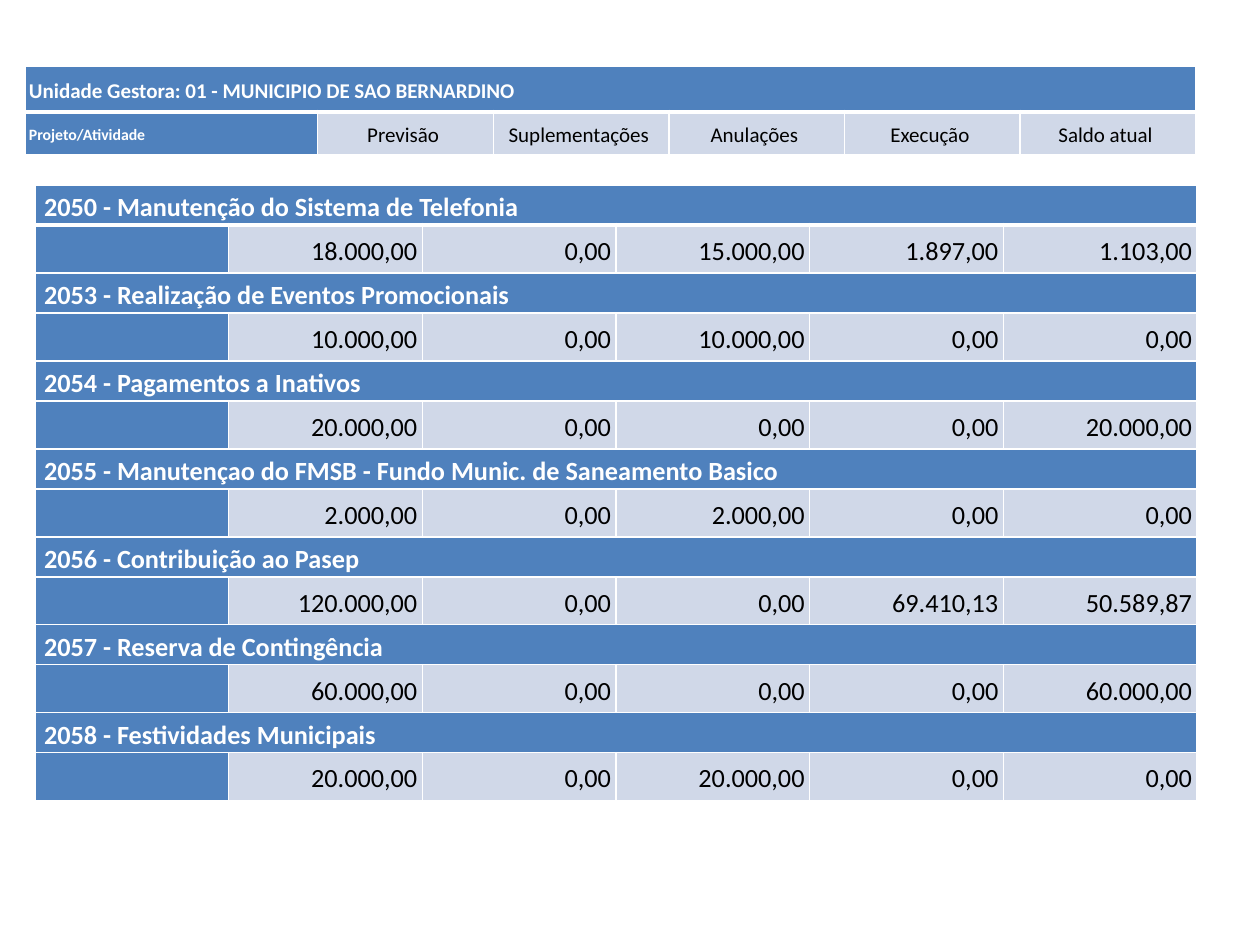
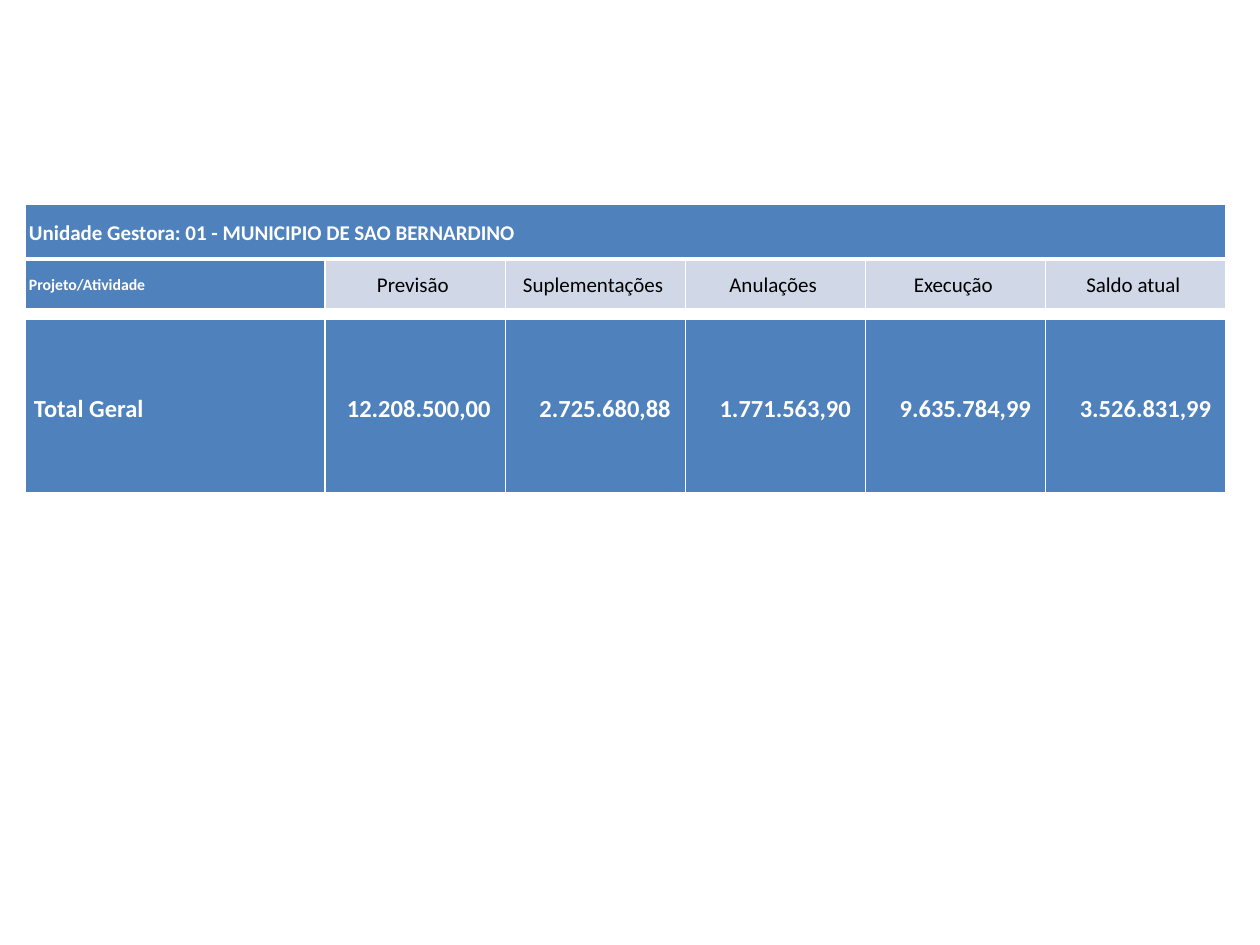
from dataclasses import dataclass

from lxml import etree
from pptx import Presentation
from pptx import util as u
from pptx.dml import color
from pptx.enum import text
from pptx.oxml import ns

EMU_PER_INCH = 914400
PX_PER_INCH = 126


@dataclass(frozen=True)
class Theme:
    font: str = "Calibri"
    band: str = "4F81BD"
    pale: str = "D0D8E8"
    light: str = "FFFFFF"
    dark: str = "000000"
    caption_size: int = 9
    header_size: int = 12
    total_size: int = 14
    activity_size: int = 15
    line_spacing: float = 1.15
    thin: int = 1
    thick: int = 3


THEME = Theme()
LEFT, CENTER, RIGHT = text.PP_ALIGN.LEFT, text.PP_ALIGN.CENTER, text.PP_ALIGN.RIGHT

UNIT = "Unidade Gestora: 01 - MUNICIPIO DE SAO BERNARDINO"
COLUMNS = ["Previsão ", "Suplementações ", "Anulações ", "Execução ", "Saldo atual "]
EQUAL_SHARES = [1 / 6] * 6
LABEL_SHARES = [0.25] + [0.15] * 5

ACTIVITIES = [
    ("2050 - Manutenção do Sistema de Telefonia",
     ["18.000,00", "0,00", "15.000,00", "1.897,00", "1.103,00"]),
    ("2053 - Realização de Eventos Promocionais",
     ["10.000,00", "0,00", "10.000,00", "0,00", "0,00"]),
    ("2054 - Pagamentos a Inativos",
     ["20.000,00", "0,00", "0,00", "0,00", "20.000,00"]),
    ("2055 - Manutençao do FMSB - Fundo Munic. de Saneamento Basico",
     ["2.000,00", "0,00", "2.000,00", "0,00", "0,00"]),
    ("2056 - Contribuição ao Pasep",
     ["120.000,00", "0,00", "0,00", "69.410,13", "50.589,87"]),
    ("2057 - Reserva de Contingência",
     ["60.000,00", "0,00", "0,00", "0,00", "60.000,00"]),
    ("2058 - Festividades Municipais",
     ["20.000,00", "0,00", "20.000,00", "0,00", "0,00"]),
]
TOTALS = ["12.208.500,00 ", "2.725.680,88 ", "1.771.563,90 ",
          "9.635.784,99 ", "3.526.831,99 "]


def px(length):
    return u.Emu(round(length * EMU_PER_INCH / PX_PER_INCH))


# Table helpers
def set_borders(cell, top, bottom):
    properties = cell._tc.get_or_add_tcPr()
    widths = {"lnL": THEME.thin, "lnR": THEME.thin, "lnT": top, "lnB": bottom}
    for tag, width in widths.items():
        line = etree.SubElement(properties, ns.qn(f"a:{tag}"), w=str(u.Pt(width)))
        fill = etree.SubElement(line, ns.qn("a:solidFill"))
        etree.SubElement(fill, ns.qn("a:srgbClr"), val=THEME.light)


def set_fill(cell, fill):
    cell.fill.solid()
    cell.fill.fore_color.rgb = color.RGBColor.from_string(fill)


def add_grid(slide, box, heights, shares, thick_below=0):
    """Add a banded-blue table with white rules; one row's lower rule is thick."""
    left, top, width = box
    frame = slide.shapes.add_table(len(heights), len(shares), px(left), px(top),
                                   px(width), px(sum(heights)))
    table = frame.table
    table.first_row = table.horz_banding = False
    for column, share in zip(table.columns, shares):
        column.width = px(width * share)
    for index, (row, height) in enumerate(zip(table.rows, heights)):
        row.height = px(height)
        above = THEME.thick if index == thick_below + 1 else THEME.thin
        below = THEME.thick if index == thick_below else THEME.thin
        for cell in row.cells:
            set_borders(cell, above, below)
            set_fill(cell, THEME.band)
            set_margins(cell, 0, 0)
    return table


def set_margins(cell, side, edge):
    cell.margin_left = cell.margin_right = px(side)
    cell.margin_top = cell.margin_bottom = px(edge)


def write(cell, words, size, margins, align=LEFT, pale=False):
    set_margins(cell, *margins)
    cell.vertical_anchor = text.MSO_ANCHOR.MIDDLE
    if pale:
        set_fill(cell, THEME.pale)
    paragraph = cell.text_frame.paragraphs[0]
    paragraph.alignment = align
    paragraph.line_spacing = THEME.line_spacing
    run = paragraph.add_run()
    run.text = words
    run.font.name = THEME.font
    run.font.size = u.Pt(size)
    run.font.bold = not pale
    run.font.color.rgb = color.RGBColor.from_string(THEME.dark if pale else THEME.light)


def merge_row(table, row):
    first = table.cell(row, 0)
    first.merge(table.cell(row, len(table.columns) - 1))
    return first


# Regions
def add_header(slide, box, heights):
    table = add_grid(slide, box, heights, LABEL_SHARES)
    margins = (4, 1)
    write(merge_row(table, 0), UNIT, THEME.header_size, margins)
    write(table.cell(1, 0), "Projeto/Atividade", THEME.caption_size, margins)
    for column, name in enumerate(COLUMNS, 1):
        write(table.cell(1, column), name, THEME.header_size, margins, CENTER, pale=True)


def add_activities(slide, box, title_height, value_height):
    heights = [title_height, value_height] * len(ACTIVITIES)
    table = add_grid(slide, box, heights, EQUAL_SHARES)
    for index, (title, values) in enumerate(ACTIVITIES):
        write(merge_row(table, 2 * index), title, THEME.activity_size, (9, 1))
        for column, value in enumerate(values, 1):
            write(table.cell(2 * index + 1, column), value, THEME.activity_size,
                  (5, 5), RIGHT, pale=True)


def add_total(slide, box, height):
    table = add_grid(slide, box, [height], LABEL_SHARES)
    for column, words in enumerate(["Total Geral"] + TOTALS):
        write(table.cell(0, column), words, THEME.total_size, (9, 1),
              RIGHT if column else LEFT)


# Slides
def build_activity_slide(slide):
    add_activities(slide, (35, 185, 1162), 40, 48)
    add_header(slide, (25, 66, 1171), [46, 43])


def build_total_slide(slide):
    add_total(slide, (25, 319, 1201), 175)
    add_header(slide, (25, 204, 1201), [55, 50])


def main():
    presentation = Presentation()
    presentation.slide_width, presentation.slide_height = px(1260), px(945)
    for build in (build_activity_slide, build_total_slide):
        build(presentation.slides.add_slide(presentation.slide_layouts[6]))
    presentation.save("out.pptx")


if __name__ == "__main__":
    main()
